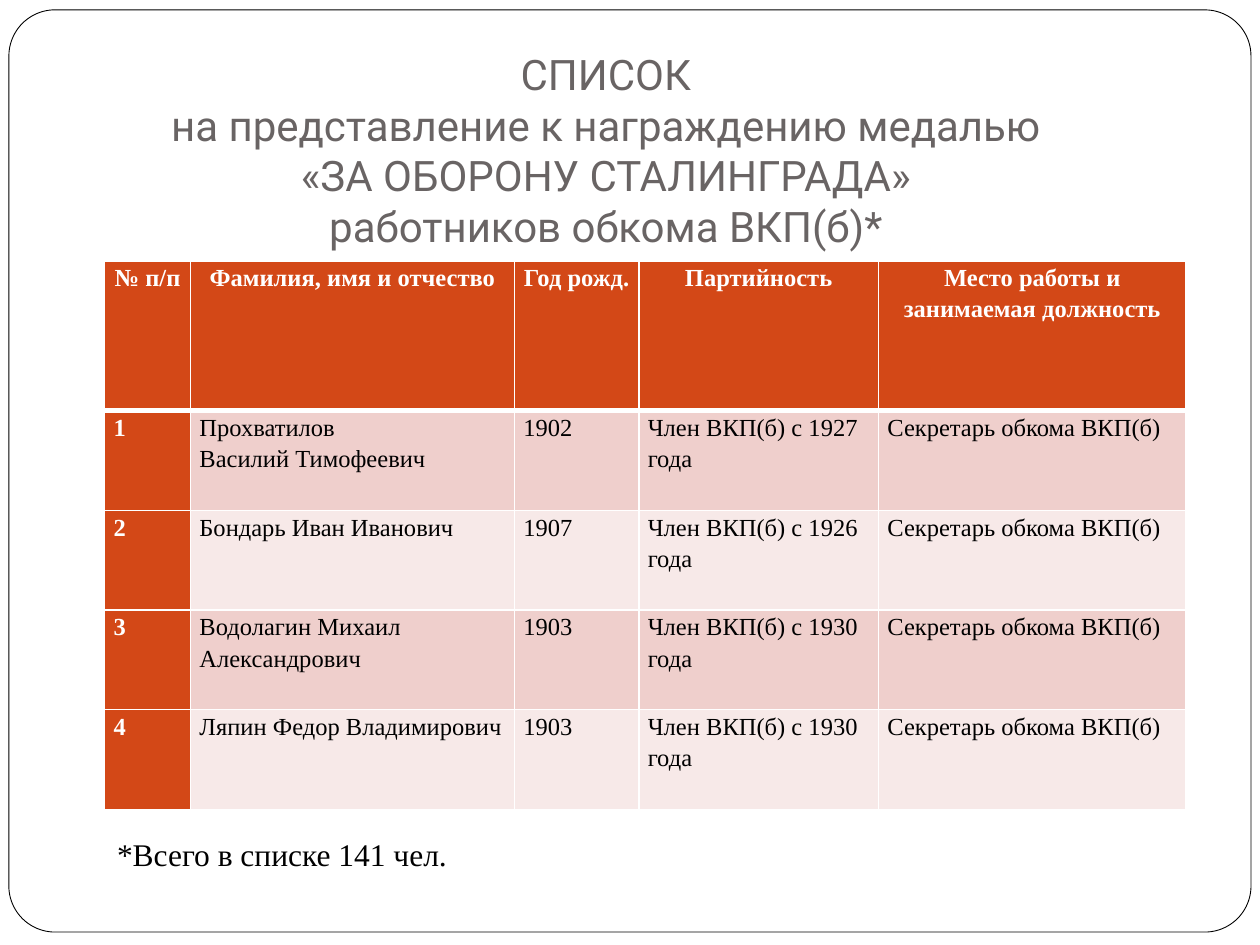
from lxml import etree
from pptx import Presentation
from pptx.dml.color import RGBColor
from pptx.enum import shapes, text
from pptx.oxml.ns import qn
from pptx.util import Cm, Pt

SERIF = "Times New Roman"
WHITE, BLACK, GREY = "FFFFFF", "000000", "696464"
ORANGE, PINK, PALE = "D34817", "EFCFCC", "F7E9E8"

TITLE = "\v".join([
    "СПИСОК",
    "на представление к награждению медалью",
    "«ЗА ОБОРОНУ СТАЛИНГРАДА»",
    "работников обкома ВКП(б)*",
])
HEADINGS = ["№ п/п", "Фамилия, имя и отчество", "Год рожд.", "Партийность",
            "Место работы и занимаемая должность"]
# name, year of birth, party member since
PEOPLE = [
    ("Прохватилов\nВасилий Тимофеевич", 1902, 1927),
    ("Бондарь Иван Иванович", 1907, 1926),
    ("Водолагин Михаил Александрович", 1903, 1930),
    ("Ляпин Федор Владимирович", 1903, 1930),
]
COLUMN_WIDTHS = [1.73, 6.53, 2.51, 4.83, 6.2]
HEADER_HEIGHT, ROW_HEIGHT = 3.02, 2.01


def colour(value):
    return RGBColor.from_string(value)


def fill_with(item, value):
    item.fill.solid()
    item.fill.fore_color.rgb = colour(value)


def format_text(frame, font, size, value, bold=False, align=None, spacing=None):
    for para in frame.paragraphs:
        para.alignment = align
        para.line_spacing = spacing
        for span in para.runs:
            span.font.name = font
            span.font.size = Pt(size)
            span.font.bold = bold
            span.font.color.rgb = colour(value)


def add_title(page):
    title = page.shapes.title
    title.left, title.top = Cm(0.3), Cm(0.76)
    title.width, title.height = Cm(23.83), Cm(5.56)
    frame = title.text_frame
    frame.text = TITLE
    frame.auto_size = text.MSO_AUTO_SIZE.NONE
    frame.vertical_anchor = text.MSO_ANCHOR.BOTTOM
    frame.margin_bottom = Cm(1.27)
    format_text(frame, "Roboto", 24, GREY, align=text.PP_ALIGN.CENTER)


def add_border(page):
    """Rounded outline around the page, placed behind the title."""
    border = page.shapes.add_shape(shapes.MSO_SHAPE.ROUNDED_RECTANGLE,
                                   Cm(0.18), Cm(0.2), Cm(25.04), Cm(18.59))
    border.adjustments[0] = 0.05
    border.shadow.inherit = False
    fill_with(border, WHITE)
    border.line.color.rgb = colour(BLACK)
    border.line.width = Pt(0.5)
    page.shapes.title.element.addprevious(border.element)


def add_cell_borders(holder):
    """White lines round every cell, thicker below the header row."""
    for row, line in enumerate(holder.element.iter(qn("a:tr"))):
        widths = {"L": 1, "R": 1, "T": 3 if row == 1 else 1, "B": 3 if row == 0 else 1}
        for properties in line.iter(qn("a:tcPr")):
            for place, (side, width) in enumerate(widths.items()):
                edge = etree.Element(qn(f"a:ln{side}"), w=str(Pt(width)))
                paint = etree.SubElement(edge, qn("a:solidFill"))
                etree.SubElement(paint, qn("a:srgbClr"), val=WHITE)
                properties.insert(place, edge)


def write_cell(cell, content, row, column):
    header = row == 0
    strong = header or column == 0
    cell.text = content
    cell.margin_left = cell.margin_right = Cm(0.18)
    cell.margin_top = cell.margin_bottom = 0
    fill_with(cell, ORANGE if strong else PINK if row % 2 else PALE)
    format_text(cell.text_frame, SERIF, 14, WHITE if strong else BLACK, strong,
                text.PP_ALIGN.CENTER if header else text.PP_ALIGN.LEFT, 1.15)


def add_award_table(page):
    rows = [HEADINGS] + [
        [str(number), name, str(born), f"Член ВКП(б) с {joined} года",
         "Секретарь обкома ВКП(б)"]
        for number, (name, born, joined) in enumerate(PEOPLE, 1)
    ]
    heights = [HEADER_HEIGHT] + [ROW_HEIGHT] * len(PEOPLE)
    holder = page.shapes.add_table(len(rows), len(HEADINGS), Cm(2.11), Cm(5.26),
                                   Cm(sum(COLUMN_WIDTHS)), Cm(sum(heights)))
    table = holder.table
    for column, width in zip(table.columns, COLUMN_WIDTHS):
        column.width = Cm(width)
    for line, height in zip(table.rows, heights):
        line.height = Cm(height)
    for row, contents in enumerate(rows):
        for column, content in enumerate(contents):
            write_cell(table.cell(row, column), content, row, column)
    add_cell_borders(holder)


def add_footnote(page):
    box = page.shapes.add_textbox(Cm(2.11), Cm(16.71), Cm(7.47), Cm(1.02))
    frame = box.text_frame
    frame.text = "*Всего в списке 141 чел."
    frame.word_wrap = False
    frame.auto_size = text.MSO_AUTO_SIZE.SHAPE_TO_FIT_TEXT
    format_text(frame, SERIF, 18, BLACK)


def main():
    deck = Presentation()
    deck.slide_width, deck.slide_height = Cm(25.4), Cm(19.05)
    page = deck.slides.add_slide(deck.slide_layouts[5])
    add_title(page)
    add_border(page)
    add_award_table(page)
    add_footnote(page)
    deck.save("out.pptx")


if __name__ == "__main__":
    main()
